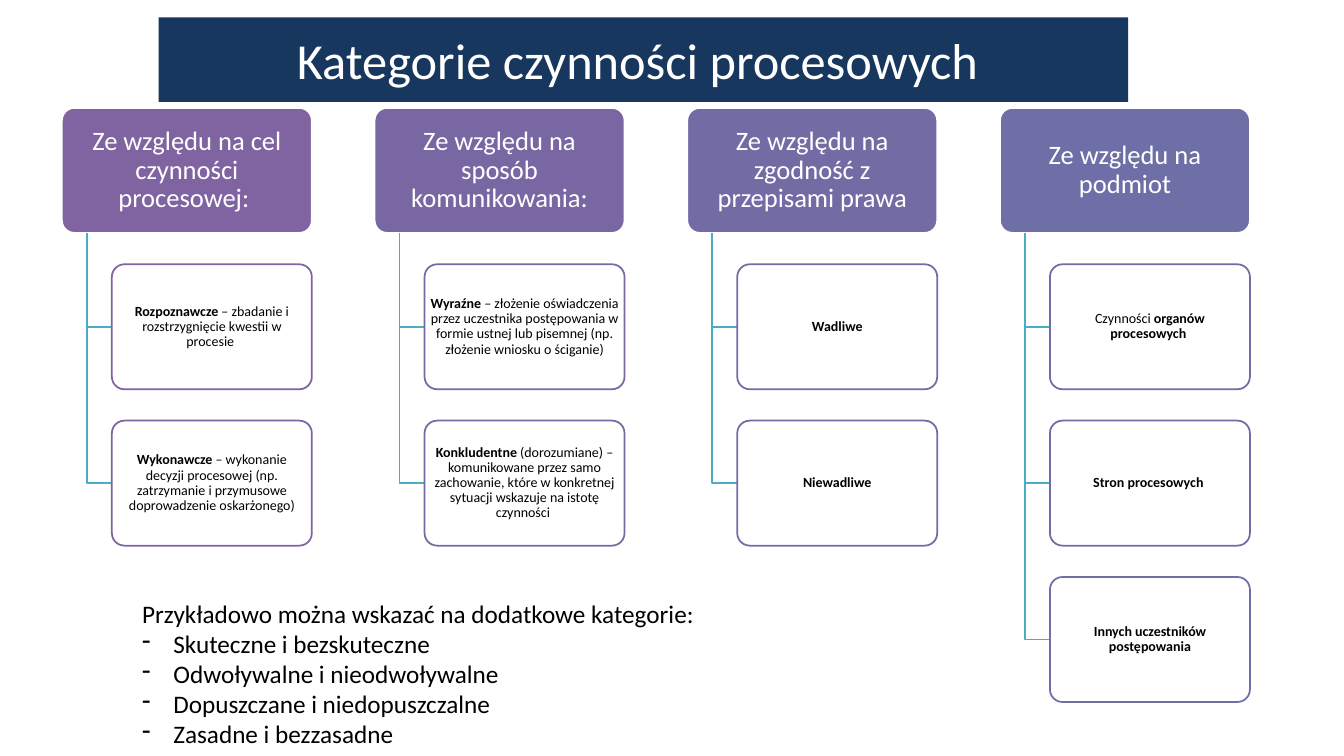
from lxml.etree import SubElement
from pptx import Presentation
from pptx.dml.color import RGBColor
from pptx.enum.shapes import MSO_SHAPE as SHAPE
from pptx.enum.text import MSO_ANCHOR as ANCHOR, MSO_AUTO_SIZE as AUTO, PP_ALIGN as ALIGN
from pptx.oxml.ns import qn
from pptx.util import Cm, Pt

TOP, LEFT, HEAD_W, BOX_H = 2.72, 1.56, 6.3, 3.15
COL_STEP, ROW_STEP = 7.88, 3.94
INDENT = HEAD_W / 5
COLUMNS = [
    ("Ze względu na cel czynności procesowej: ", "8064A2", [
        ("8064A2", [("Rozpoznawcze", True),
                    (" – zbadanie i rozstrzygnięcie kwestii w procesie ", False)]),
        ("7D65A2", [("Wykonawcze", True),
                    (" – wykonanie decyzji procesowej (np. zatrzymanie i "
                     "przymusowe doprowadzenie oskarżonego)", False)])]),
    ("Ze względu na sposób komunikowania:", "7967A3", [
        ("7B67A3", [("Wyraźne", True),
                    (" – złożenie oświadczenia przez uczestnika postępowania w formie "
                     "ustnej lub pisemnej (np. złożenie wniosku o ściganie)", False)]),
        ("7868A3", [("Konkludentne", True),
                    (" (dorozumiane) – komunikowane przez samo zachowanie, które w "
                     "konkretnej sytuacji wskazuje na istotę czynności ", False)])]),
    ("Ze względu na zgodność z przepisami prawa", "736BA4", [
        ("7669A4", [("Wadliwe", True)]),
        ("746AA4", [("Niewadliwe", True)])]),
    ("Ze względu na podmiot", "6E6FA6", [
        ("726CA5", [("Czynności ", False), ("organów procesowych ", True)]),
        ("706DA5", [("Stron procesowych ", True)]),
        ("6E6FA6", [("Innych uczestników postępowania", True)])]),
]
EXTRA_INTRO = "Przykładowo można wskazać na dodatkowe kategorie:"
EXTRA = ["Skuteczne i bezskuteczne", "Odwoływalne i nieodwoływalne",
         "Dopuszczane i niedopuszczalne", "Zasadne i bezzasadne"]


def rgb(value):
    """Turn a hex string into a colour."""
    return RGBColor.from_string(value)


class Deck:
    """Hold the style and the current slide."""

    font, white, black, link = "Calibri", "FFFFFF", "000000", "4BACC6"
    line_w = Pt(1.25)

    def __init__(self, slide):
        """Remember the slide to draw on."""
        self.s = slide

    def run(self, p, text, size, color, bold=False):
        """Add one formatted run."""
        r = p.add_run()
        r.text = text
        f = r.font
        f.name, f.size, f.bold = self.font, Pt(size), bold
        f.color.rgb = rgb(color)

    def title(self, x, y, w, h, text, fill):
        """Place the title as a rounded banner."""
        sp = self.s.shapes.title
        sp.left, sp.top, sp.width, sp.height = Cm(x), Cm(y), Cm(w), Cm(h)
        geom = SubElement(sp._element.spPr, qn("a:prstGeom"), prst="roundRect")
        SubElement(geom, qn("a:avLst"))
        sp.fill.solid()
        sp.fill.fore_color.rgb = rgb(fill)
        tf = sp.text_frame
        tf.auto_size, tf.word_wrap = AUTO.NONE, True
        tf.vertical_anchor = ANCHOR.MIDDLE
        p = tf.paragraphs[0]
        p.alignment = ALIGN.CENTER
        self.run(p, text, 36, self.white)

    def box(self, x, y, w, runs, size, color, fill, line, inset, alpha=None):
        """Add a rounded box with centred text."""
        sp = self.s.shapes.add_shape(SHAPE.ROUNDED_RECTANGLE, Cm(x), Cm(y), Cm(w), Cm(BOX_H))
        sp.adjustments[0] = 0.1
        sp.shadow.inherit = False
        sp.fill.solid()
        sp.fill.fore_color.rgb = rgb(fill)
        if alpha:
            clr = sp._element.spPr.find(qn("a:solidFill"))[0]
            SubElement(clr, qn("a:alpha"), val=str(alpha * 1000))
        sp.line.color.rgb = rgb(line)
        sp.line.width = self.line_w
        tf = sp.text_frame
        tf.word_wrap, tf.vertical_anchor = True, ANCHOR.MIDDLE
        tf.margin_left = tf.margin_right = Cm(inset)
        tf.margin_top = tf.margin_bottom = Cm(inset * 0.7)
        p = tf.paragraphs[0]
        p.alignment, p.line_spacing = ALIGN.CENTER, 0.9
        for text, bold in runs:
            self.run(p, text, size, color, bold)

    def elbow(self, x, top, bottom, right):
        """Add an open line going down, then right."""
        fb = self.s.shapes.build_freeform(Cm(x), Cm(top))
        fb.add_line_segments([(Cm(x), Cm(bottom)), (Cm(right), Cm(bottom))], close=False)
        sp = fb.convert_to_shape()
        sp.shadow.inherit = False
        sp.fill.background()
        sp.line.color.rgb = rgb(self.link)
        sp.line.width = self.line_w

    def bullets(self, x, y, w, h, intro, items):
        """Add an intro line followed by dashed items."""
        tf = self.s.shapes.add_textbox(Cm(x), Cm(y), Cm(w), Cm(h)).text_frame
        tf.word_wrap = True
        self.run(tf.paragraphs[0], intro, 18, self.black)
        for item in items:
            p = tf.add_paragraph()
            pPr = p._p.get_or_add_pPr()
            pPr.set("marL", str(Cm(0.79)))
            pPr.set("indent", str(-Cm(0.79)))
            SubElement(pPr, qn("a:buChar"), char="-")
            self.run(p, item, 18, self.black)


def main():
    """Build and save the slide."""
    prs = Presentation()
    prs.slide_width, prs.slide_height = Cm(33.87), Cm(19.05)
    deck = Deck(prs.slides.add_slide(prs.slide_layouts[5]))
    deck.title(4, 0.44, 24.43, 2.13, "Kategorie czynności procesowych ", "17375E")
    for col, (heading, color, items) in enumerate(COLUMNS):
        x = LEFT + col * COL_STEP
        deck.box(x, TOP, HEAD_W, [(heading, False)], 19, deck.white, color, deck.white, 0.1)
        for row, (line, runs) in enumerate(items, 1):
            y = TOP + row * ROW_STEP
            deck.elbow(x + INDENT / 2, TOP + BOX_H, y + BOX_H / 2, x + INDENT)
            deck.box(x + INDENT, y, HEAD_W - INDENT, runs, 10, deck.black,
                     deck.white, line, 0.05, alpha=90)
    deck.bullets(3.33, 14.94, 22.23, 4.11, EXTRA_INTRO, EXTRA)
    prs.save("out.pptx")


if __name__ == "__main__":
    main()
